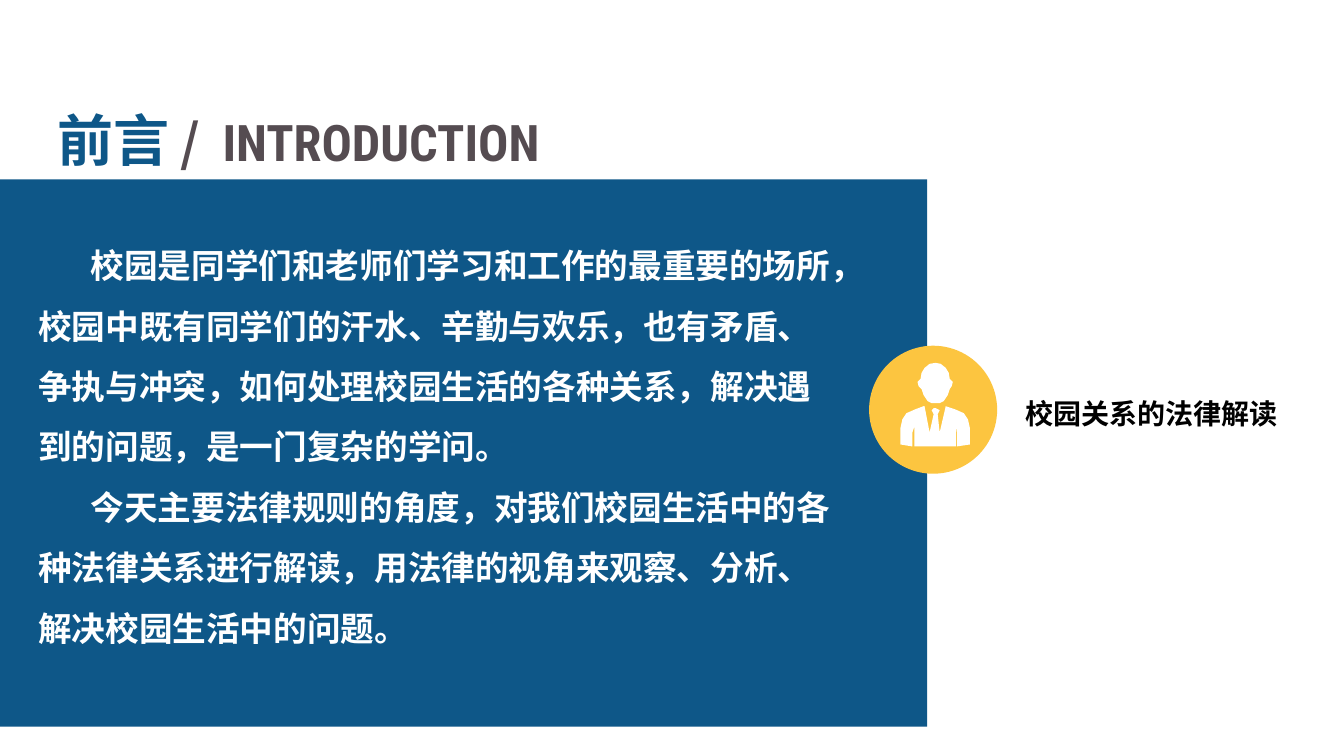
from dataclasses import dataclass

from lxml import etree
from pptx import Presentation
from pptx.dml.color import RGBColor
from pptx.enum.shapes import MSO_SHAPE
from pptx.enum.text import MSO_ANCHOR, MSO_AUTO_SIZE, PP_ALIGN
from pptx.oxml.ns import qn
from pptx.util import Inches, Pt

RECT, OVAL = MSO_SHAPE.RECTANGLE, MSO_SHAPE.OVAL
TOP, MIDDLE = MSO_ANCHOR.TOP, MSO_ANCHOR.MIDDLE
LEFT, CENTER = PP_ALIGN.LEFT, PP_ALIGN.CENTER
NO_FIT = MSO_AUTO_SIZE.NONE

COLORS = {"blue": "0E5788", "gray": "554C51", "yellow": "FCC540",
          "white": "FFFFFF", "black": "000000"}
CJK, CONDENSED = "Noto Sans CJK SC", "Roboto Condensed"


@dataclass
class Block:
    kind: MSO_SHAPE
    left: float
    top: float
    width: float
    height: float
    color: str


@dataclass
class Run:
    text: str
    size: float
    color: str
    font: str = CJK
    spacing: int = 0


PANEL = Block(RECT, 0, 1.78, 9.195, 5.43, "blue")
BADGE = Block(OVAL, 8.62, 3.43, 1.27, 1.27, "yellow")

SUIT = [(9.62, 4.25), (9.6, 4.16), (9.56, 4.1), (9.47, 4.06), (9.38, 4.03),
        (9.32, 4.29), (9.3, 4.11), (9.32, 4.07), (9.28, 4.05), (9.26, 4.05),
        (9.24, 4.07), (9.26, 4.11), (9.22, 4.29), (9.17, 4.03), (9.16, 4.03),
        (9.08, 4.06), (8.99, 4.1), (8.95, 4.16), (8.93, 4.25), (8.93, 4.41),
        (8.99, 4.42), (9.05, 4.43), (9.05, 4.29), (9.07, 4.23), (9.07, 4.43),
        (9.48, 4.43), (9.48, 4.23), (9.49, 4.29), (9.49, 4.43), (9.62, 4.41)]
HEAD = [(9.13, 3.76), (9.1, 3.79), (9.11, 3.83), (9.14, 3.86), (9.16, 3.92),
        (9.2, 3.98), (9.24, 4), (9.28, 4), (9.32, 4), (9.36, 3.98),
        (9.4, 3.92), (9.42, 3.86), (9.44, 3.83), (9.45, 3.79), (9.42, 3.76),
        (9.41, 3.7), (9.38, 3.65), (9.33, 3.61), (9.28, 3.6), (9.22, 3.61),
        (9.17, 3.65), (9.14, 3.7)]

TITLE = [Run("前言", 40, "blue"), Run(" /", 36, "gray"),
         Run(" ", 36, "gray", spacing=800),
         Run("INTRODUCTION", 36, "gray", CONDENSED)]
BODY = [
    "校园是同学们和老师们学习和工作的最重要的场所，校园中既有同学们的汗水、辛勤与欢乐，"
    "也有矛盾、争执与冲突，如何处理校园生活的各种关系，解决遇到的问题，是一门复杂的学问。",
    "今天主要法律规则的角度，对我们校园生活中的各种法律关系进行解读，"
    "用法律的视角来观察、分析、解决校园生活中的问题。",
]


def paint(sp, color: str) -> None:
    """Give a shape a plain fill without line or shadow."""
    sp.fill.solid()
    sp.fill.fore_color.rgb = RGBColor.from_string(COLORS[color])
    sp.line.fill.background()
    sp.shadow.inherit = False


def add_block(shapes, block: Block) -> None:
    """Draw one preset shape."""
    sp = shapes.add_shape(block.kind, Inches(block.left), Inches(block.top),
                          Inches(block.width), Inches(block.height))
    paint(sp, block.color)


def add_outline(shapes, points: list[tuple[float, float]], color: str) -> None:
    """Draw a closed outline through points in inches."""
    start, *rest = [(Inches(x), Inches(y)) for x, y in points]
    builder = shapes.build_freeform(*start, scale=1.0)
    builder.add_line_segments(rest, close=True)
    paint(builder.convert_to_shape(), color)


def write(sp, paragraphs: list[list[Run]], *, at: tuple[float, float, float, float],
          inset: tuple[float, float] = (0.1, 0.05), align: PP_ALIGN = LEFT,
          anchor: MSO_ANCHOR = MIDDLE, wrap: bool = False,
          leading: float | None = None, indent: float = 0) -> None:
    """Place a text shape and fill it with formatted paragraphs."""
    sp.left, sp.top, sp.width, sp.height = map(Inches, at)
    tf = sp.text_frame
    tf.auto_size, tf.word_wrap, tf.vertical_anchor = NO_FIT, wrap, anchor
    tf.margin_left = tf.margin_right = Inches(inset[0])
    tf.margin_top = tf.margin_bottom = Inches(inset[1])
    for i, runs in enumerate(paragraphs):
        p = tf.add_paragraph() if i else tf.paragraphs[0]
        p.alignment = align
        p.space_before = p.space_after = Pt(0)
        p.line_spacing = Pt(leading) if leading else 1.0
        pPr = p._p.get_or_add_pPr()
        pPr.set("marL", "0")
        pPr.set("indent", str(Inches(indent)))
        etree.SubElement(pPr, qn("a:buNone"))
        for run in runs:
            r = p.add_run()
            r.text = run.text
            r.font.size, r.font.bold, r.font.name = Pt(run.size), True, run.font
            r.font.color.rgb = RGBColor.from_string(COLORS[run.color])
            rPr = r._r.get_or_add_rPr()
            etree.SubElement(rPr, qn("a:ea")).set("typeface", run.font)
            if run.spacing:
                rPr.set("spc", str(run.spacing))


def main() -> None:
    """Build the introduction slide."""
    prs = Presentation()
    prs.slide_width, prs.slide_height = Inches(13.33), Inches(7.5)
    s = prs.slides.add_slide(prs.slide_layouts[1])
    title, body = s.placeholders
    add_block(s.shapes, PANEL)
    panel = s.shapes[-1]
    s.shapes._spTree.insert(2, panel._element)

    write(title, [TITLE], at=(0.26, 0.98, 5.4, 0.81), inset=(0.13, 0.07),
          align=CENTER)
    write(body, [[Run(text, 24, "white")] for text in BODY],
          at=(0.28, 2.18, 8.1, 4.9), anchor=TOP, wrap=True,
          leading=43.2, indent=0.52)

    icon = s.shapes.add_group_shape()
    add_block(icon.shapes, BADGE)
    for points in (SUIT, HEAD):
        add_outline(icon.shapes, points, "white")

    label = s.shapes.add_textbox(0, 0, 0, 0)
    write(label, [[Run("校园关系的法律解读", 20, "black")]],
          at=(10.1, 3.9, 2.68, 0.41), inset=(0.07, 0.04))
    prs.save("out.pptx")


if __name__ == "__main__":
    main()
